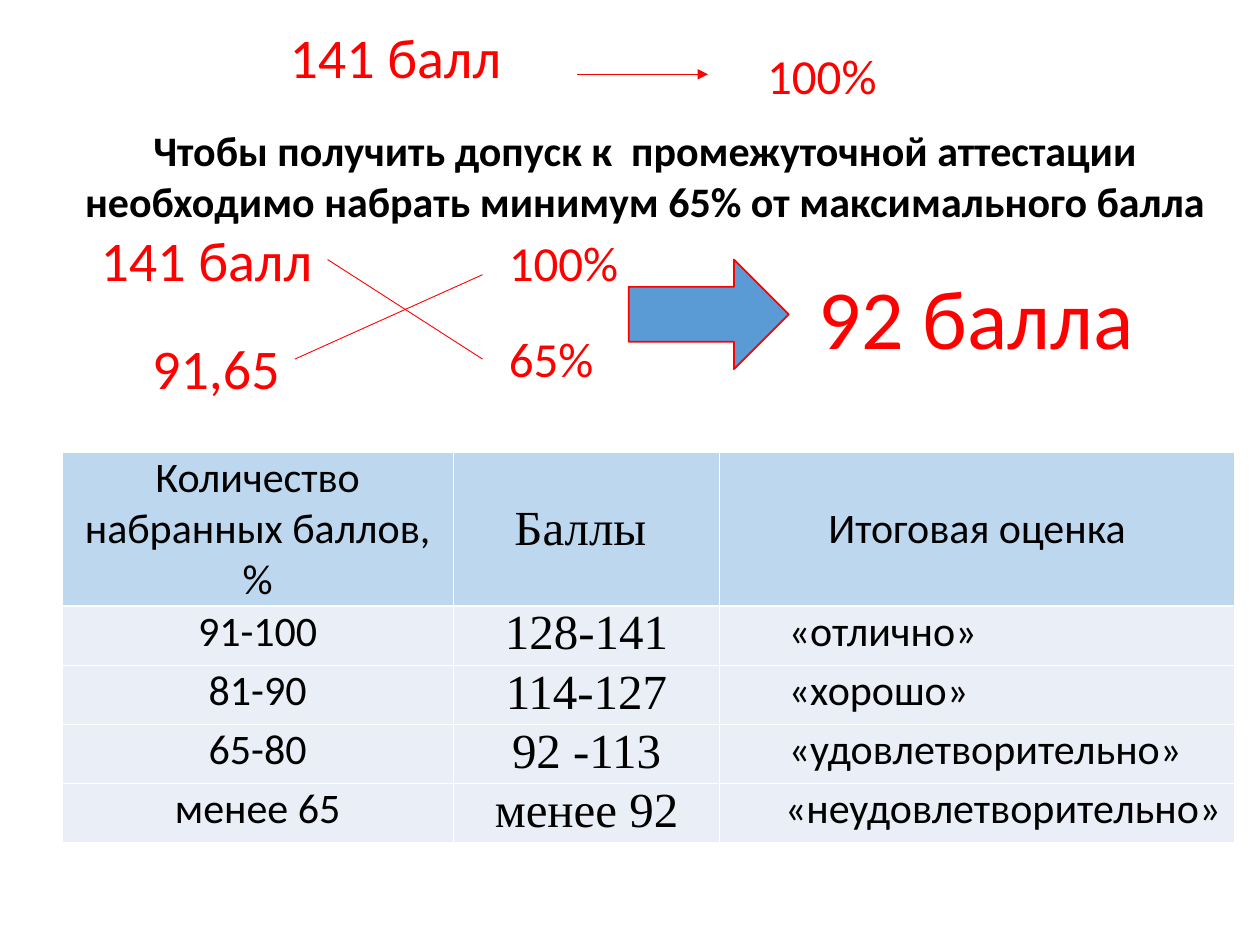
"""Build a slide that converts points to percentages and final grades."""
from lxml import etree
from pptx import Presentation
from pptx import util as u
from pptx.dml.color import RGBColor
from pptx.enum import shapes, text
from pptx.oxml.ns import qn

RED, BLACK, WHITE = "FF0000", "000000", "FFFFFF"


def color(value):
    return RGBColor.from_string(value)


def write(frame, content, size=24, font="Calibri", fill=BLACK, bold=False,
          align=text.PP_ALIGN.LEFT, wrap=True):
    frame.word_wrap = wrap
    paragraph = frame.paragraphs[0]
    paragraph.alignment = align
    run = paragraph.add_run()
    run.text = content
    run.font.size = u.Pt(size)
    run.font.name = font
    run.font.bold = bold
    run.font.color.rgb = color(fill)
    return paragraph


presentation = Presentation()
presentation.slide_width = u.Inches(10)
presentation.slide_height = u.Inches(7.5)
slide = presentation.slides.add_slide(presentation.slide_layouts[6])
center = text.PP_ALIGN.CENTER

rows = [
    ("Количество набранных баллов, %", "Баллы ", "Итоговая оценка"),
    ("91-100", "128-141", "«отлично»"),
    ("81-90", "114-127", "«хорошо»"),
    ("65-80", "92 -113", "«удовлетворительно»"),
    ("менее 65", "менее 92", "«неудовлетворительно»"),
]
widths = [3.11, 2.11, 4.09]
heights = [1.22] + [0.47] * 4
table = slide.shapes.add_table(
    len(rows), len(widths), u.Inches(0.49), u.Inches(3.59),
    u.Inches(sum(widths)), u.Inches(sum(heights))).table
table.first_row = False
table.horz_banding = False
for column, width in zip(table.columns, widths):
    column.width = u.Inches(width)

for row_index, labels in enumerate(rows):
    table.rows[row_index].height = u.Inches(heights[row_index])
    header = row_index == 0
    for column_index, label in enumerate(labels):
        cell = table.cell(row_index, column_index)
        cell.margin_left = cell.margin_right = u.Inches(0.06)
        cell.margin_top = cell.margin_bottom = 0
        cell.vertical_anchor = text.MSO_ANCHOR.MIDDLE if header else text.MSO_ANCHOR.TOP
        points = column_index == 1
        grade = column_index == 2 and not header
        paragraph = write(cell.text_frame, label, size=28 if points else 24,
                          font="Times New Roman" if points else "Calibri",
                          align=text.PP_ALIGN.LEFT if grade else center)
        properties = cell._tc.get_or_add_tcPr()
        if grade:
            margin, indent = (0.46, 0) if row_index == len(rows) - 1 else (0.25, 0.24)
            paragraph_properties = paragraph._p.get_or_add_pPr()
            paragraph_properties.set("marL", str(u.Inches(margin)))
            paragraph_properties.set("indent", str(u.Inches(indent)))
        for side in ("a:lnL", "a:lnR", "a:lnT", "a:lnB"):
            border = etree.SubElement(properties, qn(side), w=str(u.Pt(1)))
            border_fill = etree.SubElement(border, qn("a:solidFill"))
            etree.SubElement(border_fill, qn("a:srgbClr"), val=WHITE)
        cell.fill.solid()
        cell.fill.fore_color.rgb = color("BDD7EE" if header else "EAEFF7")

heading = "Чтобы получить допуск к  промежуточной аттестации необходимо набрать минимум 65% от максимального балла"
red_label = {"fill": RED, "wrap": False}
labels = [
    ("141 балл", 2.2, 0.13, 1.9, 0.64, {"size": 32, **red_label}),
    ("100%", 5.99, 0.31, 1.08, 0.57, {"size": 28, **red_label}),
    (heading, 0.24, 0.94, 9.76, 0.91, {"bold": True, "align": center}),
    ("141 балл", 0.7, 1.74, 1.9, 0.64, {"size": 32, **red_label}),
    ("100%", 3.94, 1.8, 1.08, 0.57, {"size": 28, **red_label}),
    ("91,65", 1.11, 2.6, 1.23, 0.64, {"size": 32, **red_label}),
    ("65%", 3.94, 2.56, 0.88, 0.57, {"size": 28, **red_label}),
    ("92 балла", 6.4, 2.06, 3.17, 0.91, {"size": 48, "fill": RED}),
]
for content, left, top, width, height, style in labels:
    box = slide.shapes.add_textbox(
        u.Inches(left), u.Inches(top), u.Inches(width), u.Inches(height))
    write(box.text_frame, content, **style)
    box.text_frame.auto_size = text.MSO_AUTO_SIZE.SHAPE_TO_FIT_TEXT

lines = [
    (4.58, 0.59, 5.62, 0.59, True),
    (2.6, 2.06, 3.83, 2.85, False),
    (2.34, 2.85, 3.83, 2.18, False),
]
for *ends, has_arrowhead in lines:
    connector = slide.shapes.add_connector(
        shapes.MSO_CONNECTOR.STRAIGHT, *[u.Inches(value) for value in ends])
    connector.line.color.rgb = color(RED)
    connector.line.width = u.Pt(0.5)
    if has_arrowhead:
        etree.SubElement(connector.line._get_or_add_ln(), qn("a:tailEnd"), type="triangle")
    etree.SubElement(connector._element.spPr, qn("a:effectLst"))

arrow = slide.shapes.add_shape(
    shapes.MSO_SHAPE.RIGHT_ARROW,
    u.Inches(4.99), u.Inches(2.06), u.Inches(1.27), u.Inches(0.87))
arrow.shadow.inherit = False
arrow.fill.solid()
arrow.fill.fore_color.rgb = color("5B9BD5")
arrow.line.color.rgb = color(RED)
arrow.line.width = u.Pt(1)

presentation.save("out.pptx")
